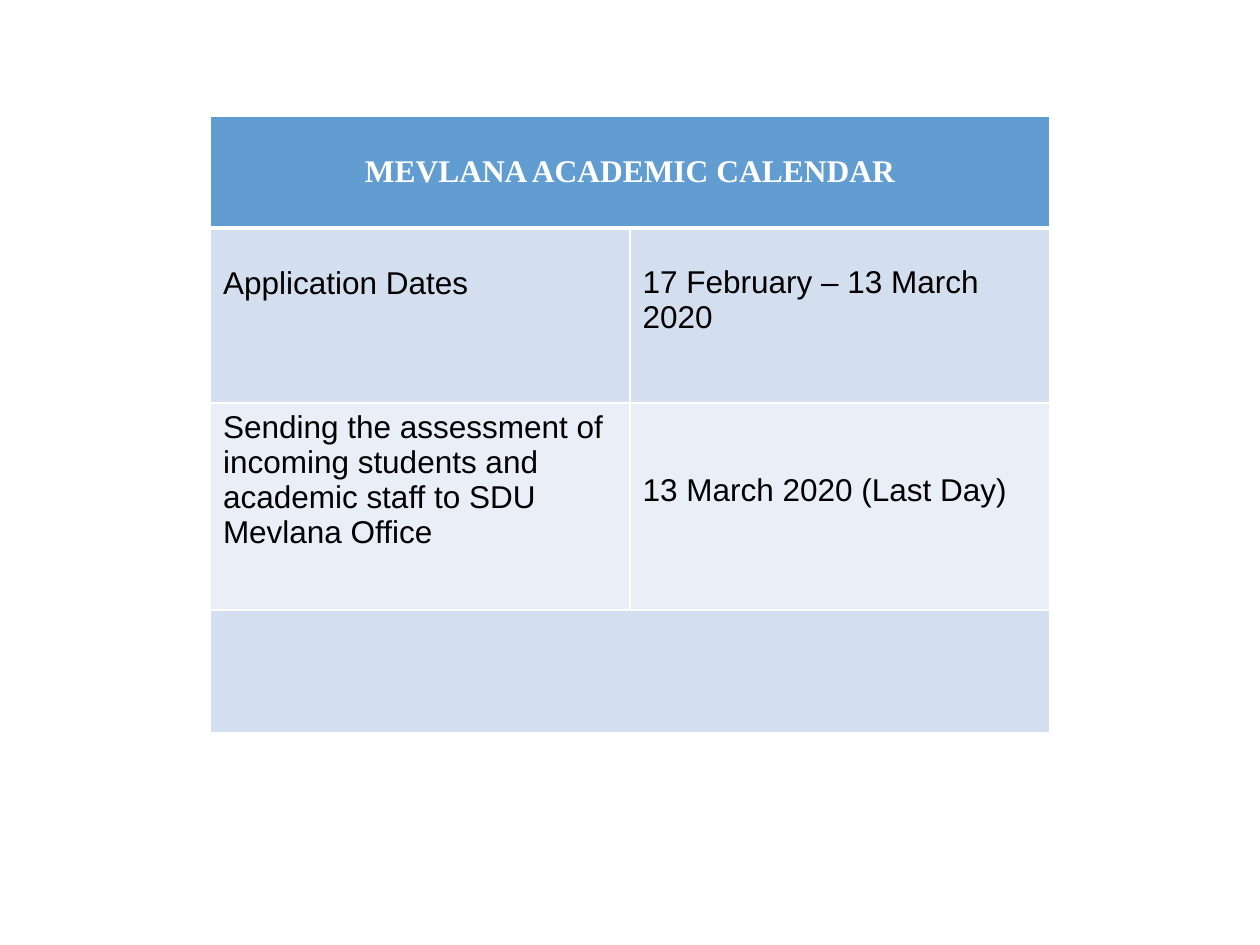
from pptx import Presentation
from pptx.dml.color import RGBColor
from pptx.enum.text import MSO_ANCHOR, PP_ALIGN
from pptx.oxml.ns import qn
from pptx.util import Inches, Pt
from lxml.etree import SubElement

WHITE = RGBColor(0xFF, 0xFF, 0xFF)
BLACK = RGBColor(0x00, 0x00, 0x00)
HEADER_BLUE = RGBColor(0x62, 0x9D, 0xD1)
BAND_BLUE = RGBColor(0xD3, 0xDF, 0xEE)
BAND_PALE = RGBColor(0xEA, 0xEF, 0xF7)

ROW_HEIGHTS = (0.89, 1.39, 1.64, 0.98)
ROW_FILLS = (HEADER_BLUE, BAND_BLUE, BAND_PALE, BAND_BLUE)
COLUMN_WIDTH = 3.33


def add_calendar(slide):
    """Add the two-column table with its header and footer rows merged."""
    frame = slide.shapes.add_table(
        len(ROW_HEIGHTS), 2, Inches(1.67), Inches(0.92),
        Inches(2 * COLUMN_WIDTH), Inches(sum(ROW_HEIGHTS)))
    calendar = frame.table
    for column in calendar.columns:
        column.width = Inches(COLUMN_WIDTH)
    for row, height in zip(calendar.rows, ROW_HEIGHTS):
        row.height = Inches(height)
    for row in (0, len(ROW_HEIGHTS) - 1):
        calendar.cell(row, 0).merge(calendar.cell(row, 1))
    return calendar


def set_border(cell, side, width):
    """Draw one white cell border; side is L, R, T or B."""
    line = SubElement(cell._tc.get_or_add_tcPr(), qn(f"a:ln{side}"), w=str(Pt(width)))
    fill = SubElement(line, qn("a:solidFill"))
    SubElement(fill, qn("a:srgbClr"), val=str(WHITE))


def style_cells(calendar):
    """Give every cell its borders and its row's band colour."""
    for row_index, color in enumerate(ROW_FILLS):
        for column_index in range(2):
            cell = calendar.cell(row_index, column_index)
            for side in "LRTB":
                # A thick rule separates the header from the body
                at_header_rule = (row_index, side) in ((0, "B"), (1, "T"))
                set_border(cell, side, 3 if at_header_rule else 1)
            cell.fill.solid()
            cell.fill.fore_color.rgb = color


def write_cell(cell, text, anchor=MSO_ANCHOR.TOP, top=0.05, bottom=0.05,
               font_name="Arial", color=BLACK, bold=False, align=PP_ALIGN.LEFT):
    cell.vertical_anchor = anchor
    cell.margin_top, cell.margin_bottom = Inches(top), Inches(bottom)
    paragraph = cell.text_frame.paragraphs[0]
    paragraph.text = text
    paragraph.alignment = align
    font = paragraph.runs[0].font
    font.name, font.size, font.bold = font_name, Pt(18), bold
    font.color.rgb = color


def main():
    prs = Presentation()
    prs.slide_width, prs.slide_height = Inches(10), Inches(7.5)
    slide = prs.slides.add_slide(prs.slide_layouts[6])

    calendar = add_calendar(slide)
    style_cells(calendar)

    # Header
    write_cell(calendar.cell(0, 0), "MEVLANA ACADEMIC CALENDAR", MSO_ANCHOR.MIDDLE,
               font_name="Times New Roman", color=WHITE, bold=True,
               align=PP_ALIGN.CENTER)

    # Tasks
    write_cell(calendar.cell(1, 0), "Application Dates", top=0.3)
    write_cell(calendar.cell(2, 0), "Sending the assessment of incoming students "
               "and academic staff to SDU Mevlana Office")

    # Dates, set a little above the middle of their rows
    dates = ("17 February – 13 March 2020", "13 March 2020 (Last Day)")
    for row, date in enumerate(dates, start=1):
        write_cell(calendar.cell(row, 1), date, MSO_ANCHOR.MIDDLE, bottom=0.3)

    prs.save("out.pptx")


if __name__ == "__main__":
    main()
